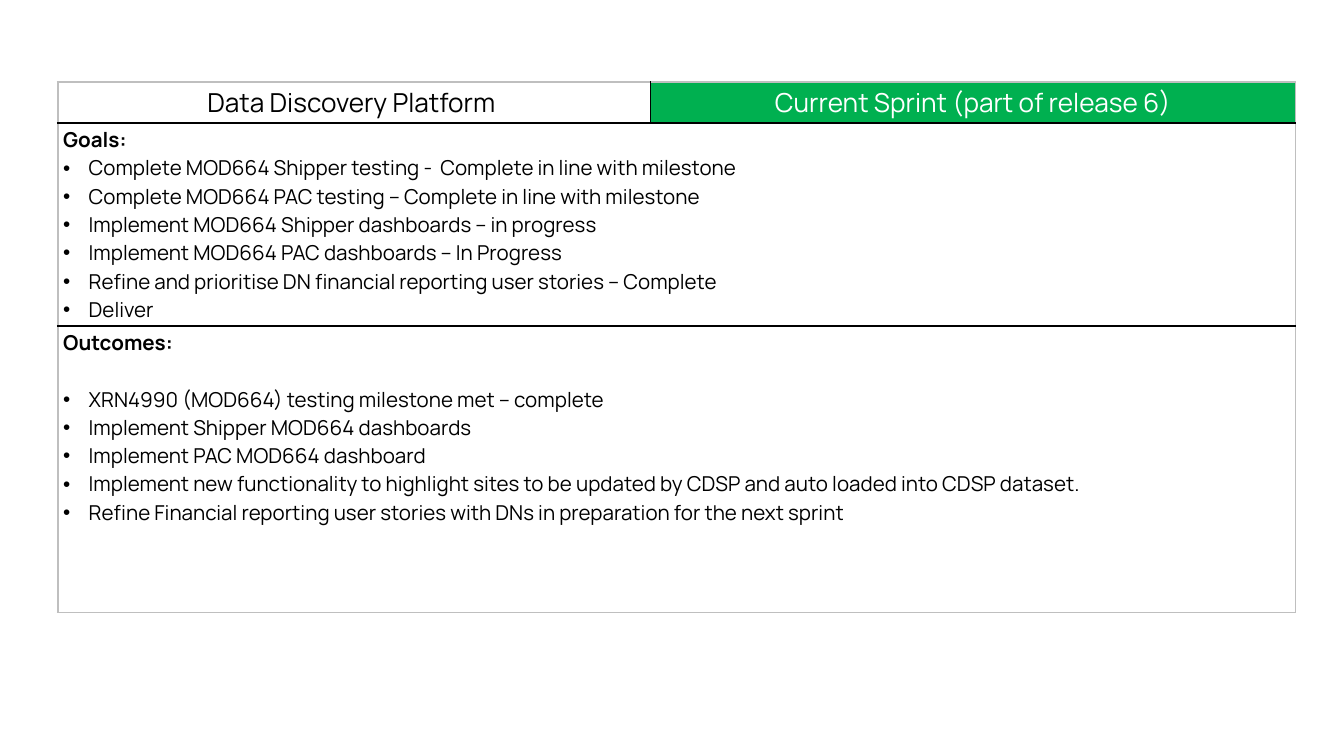
"""Build the Data Discovery Platform sprint slide."""
from dataclasses import dataclass

import lxml.etree
import pptx
import pptx.dml.color
import pptx.enum.text
import pptx.oxml.ns
import pptx.table
import pptx.text.text
import pptx.util

Inches = pptx.util.Inches
Pt = pptx.util.Pt
qn = pptx.oxml.ns.qn


@dataclass(frozen=True)
class Theme:
    font: str = "Manrope"
    text: str = "000000"
    light: str = "FFFFFF"
    green: str = "00B050"
    frame: str = "BFBFBF"
    rule: str = "000000"
    head_size: int = 14
    body_size: int = 11
    indent: float = 0.19


@dataclass(frozen=True)
class Heading:
    text: str
    color: str
    fill: str | None = None


@dataclass(frozen=True)
class Section:
    title: str
    items: tuple[str, ...]
    gap: int = 0


THEME = Theme()
COLUMNS = (4.41, 4.8)
ROWS = (0.24, 1.46, 2.13)
HEADINGS = (
    Heading("Data Discovery Platform ", THEME.text),
    Heading("Current Sprint (part of release 6)", THEME.light, THEME.green),
)
SECTIONS = (
    Section("Goals:", (
        "Complete MOD664 Shipper testing -  Complete in line with milestone",
        "Complete MOD664 PAC testing – Complete in line with milestone",
        "Implement MOD664 Shipper dashboards – in progress",
        "Implement MOD664 PAC dashboards – In Progress",
        "Refine and prioritise DN financial reporting user stories – Complete",
        "Deliver",
    )),
    Section("Outcomes:", (
        "XRN4990 (MOD664) testing milestone met – complete",
        "Implement Shipper MOD664 dashboards",
        "Implement PAC MOD664 dashboard",
        "Implement new functionality to highlight sites to be updated by CDSP "
        "and auto loaded into CDSP dataset.",
        "Refine Financial reporting user stories with DNs in preparation for the next sprint",
    ), gap=15),
)


def style_text(p: pptx.text.text._Paragraph, size: int, color: str, bold: bool = False) -> None:
    for r in p.runs:
        r.font.name = THEME.font
        r.font.size = Pt(size)
        r.font.bold = bold
        r.font.color.rgb = pptx.dml.color.RGBColor.from_string(color)


def add_bullet(p: pptx.text.text._Paragraph) -> None:
    pPr = p._p.get_or_add_pPr()
    pPr.set("marL", str(Inches(THEME.indent)))
    pPr.set("indent", str(-Inches(THEME.indent)))
    lxml.etree.SubElement(pPr, qn("a:buFont"), typeface="Arial")
    lxml.etree.SubElement(pPr, qn("a:buChar"), char="•")


def set_borders(cell: pptx.table._Cell, colors: dict[str, str]) -> None:
    tcPr = cell._tc.get_or_add_tcPr()
    for side, color in colors.items():
        ln = lxml.etree.SubElement(tcPr, qn(f"a:ln{side}"), w=str(Pt(1)))
        fill = lxml.etree.SubElement(ln, qn("a:solidFill"))
        lxml.etree.SubElement(fill, qn("a:srgbClr"), val=color)


def format_cell(cell: pptx.table._Cell, row: int, col: int) -> None:
    cell.margin_left = cell.margin_right = Inches(0.04)
    cell.margin_top = cell.margin_bottom = Inches(0.02)
    split = row == 0
    set_borders(cell, {
        "L": THEME.rule if split and col == 1 else THEME.frame,
        "R": THEME.rule if split and col == 0 else THEME.frame,
        "T": THEME.frame if row == 0 else THEME.rule,
        "B": THEME.frame if row == len(ROWS) - 1 else THEME.rule,
    })
    cell.fill.background()


def fill_heading(cell: pptx.table._Cell, heading: Heading) -> None:
    cell.vertical_anchor = pptx.enum.text.MSO_ANCHOR.MIDDLE
    if heading.fill:
        cell.fill.solid()
        cell.fill.fore_color.rgb = pptx.dml.color.RGBColor.from_string(heading.fill)
    p = cell.text_frame.paragraphs[0]
    p.text = heading.text
    p.alignment = pptx.enum.text.PP_ALIGN.CENTER
    style_text(p, THEME.head_size, heading.color)


def fill_section(cell: pptx.table._Cell, section: Section) -> None:
    tf = cell.text_frame
    tf.text = "\n".join((section.title, *section.items))
    title, *bullets = tf.paragraphs
    style_text(title, THEME.body_size, THEME.text, bold=True)
    for p in bullets:
        add_bullet(p)
        style_text(p, THEME.body_size, THEME.text)
    if section.gap:
        bullets[0].space_before = Pt(section.gap)


def main() -> None:
    prs = pptx.Presentation()
    prs.slide_width = Inches(10)
    prs.slide_height = prs.slide_width * 9 // 16
    s = prs.slides.add_slide(prs.slide_layouts[6])
    frame = s.shapes.add_table(len(ROWS), len(COLUMNS), Inches(0.43), Inches(0.61),
                               Inches(sum(COLUMNS)), Inches(3.85))
    table = frame.table
    table.first_row = table.horz_banding = False
    for column, width in zip(table.columns, COLUMNS):
        column.width = Inches(width)
    for row, height in zip(table.rows, ROWS):
        row.height = Inches(height)
    frame.height = Inches(3.85)
    for row in range(len(ROWS)):
        for col in range(len(COLUMNS)):
            format_cell(table.cell(row, col), row, col)
    for col, heading in enumerate(HEADINGS):
        fill_heading(table.cell(0, col), heading)
    for row, section in enumerate(SECTIONS, start=1):
        table.cell(row, 0).merge(table.cell(row, len(COLUMNS) - 1))
        fill_section(table.cell(row, 0), section)
    prs.save("out.pptx")


if __name__ == "__main__":
    main()
